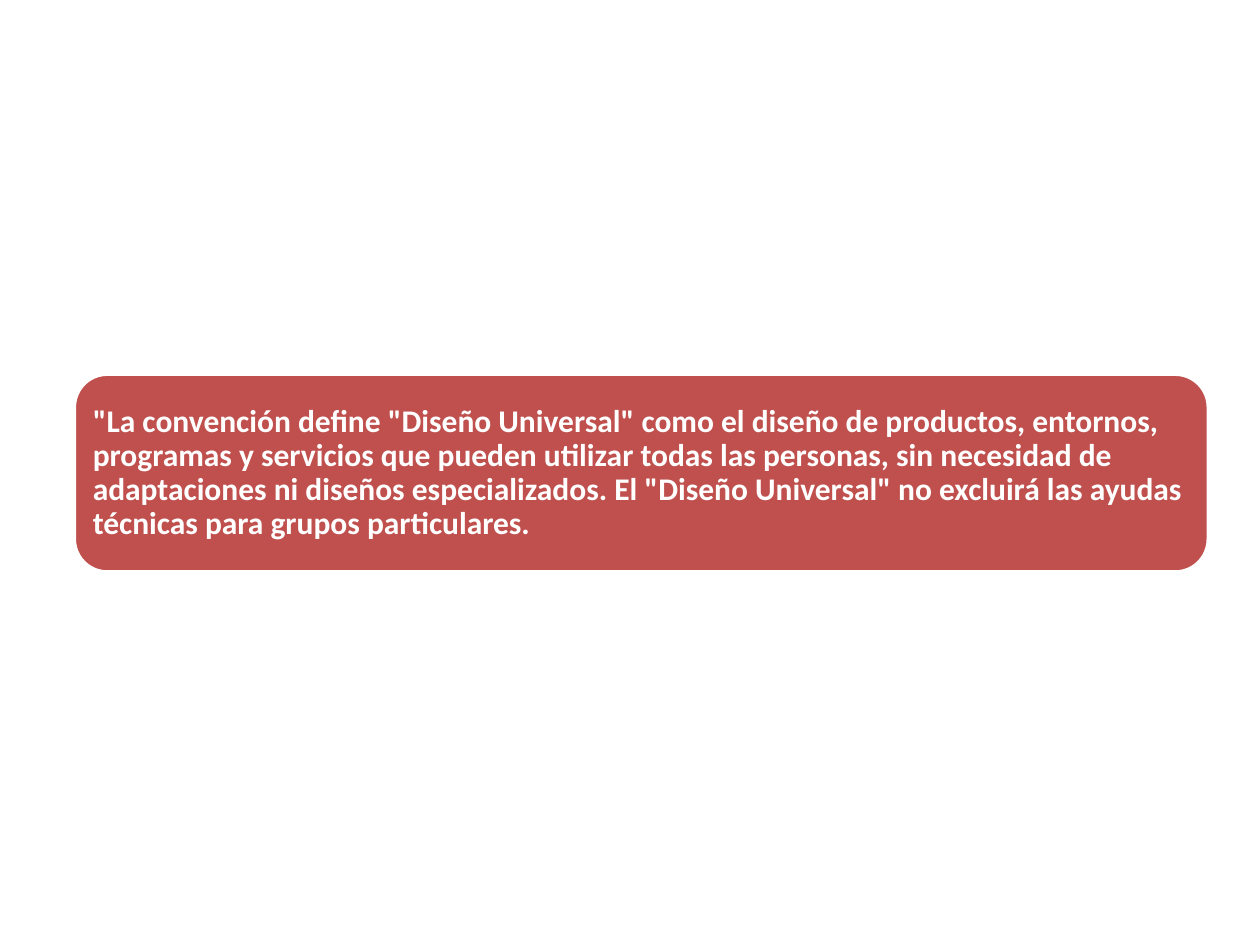
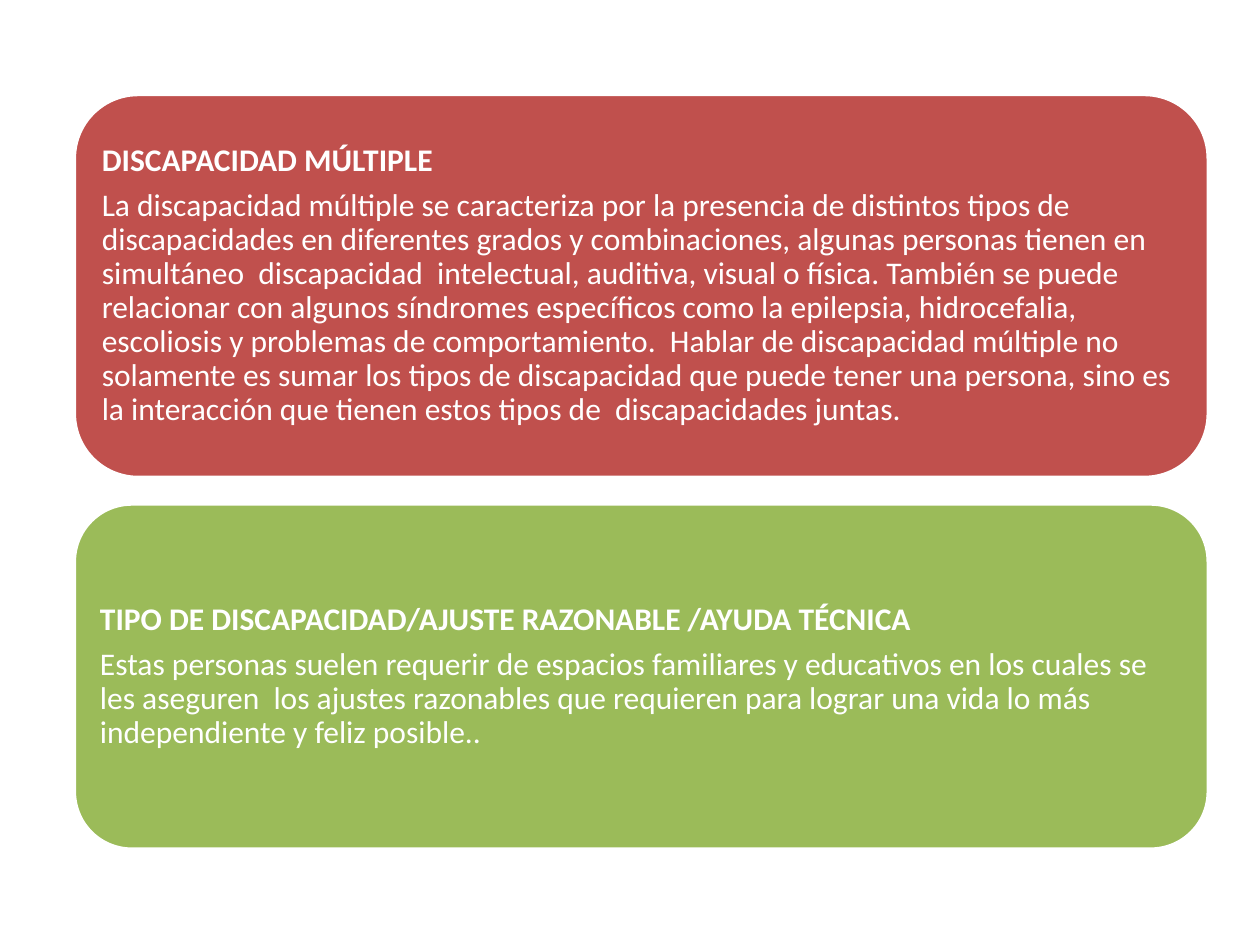
import dataclasses

import pptx
import pptx.dml.color
import pptx.enum.shapes
import pptx.enum.text
import pptx.slide
import pptx.util

RED = "C0504D"
GREEN = "9BBB59"
WHITE = "FFFFFF"
FONT = "Calibri"
PANEL_LEFT = 0.59
PANEL_WIDTH = 9
INSET = pptx.util.Inches(0.07)

FRAME_FORMAT = {
    "word_wrap": True,
    "vertical_anchor": pptx.enum.text.MSO_ANCHOR.MIDDLE,
    "margin_left": INSET,
    "margin_top": INSET,
    "margin_right": INSET,
    "margin_bottom": INSET,
}
PARAGRAPH_FORMAT = {
    "alignment": pptx.enum.text.PP_ALIGN.LEFT,
    "line_spacing": 0.9,
    "space_after": pptx.util.Pt(6.3),
}
FONT_FORMAT = {"name": FONT, "size": pptx.util.Pt(18)}


@dataclasses.dataclass(frozen=True)
class Panel:
    top: float
    height: float
    fill: str
    heading: str
    body: str = ""


UNIVERSAL_DESIGN = Panel(
    2.97, 1.57, RED,
    '"La convención define "Diseño Universal" como el diseño de productos, '
    "entornos, programas y servicios que pueden utilizar todas las personas, "
    "sin necesidad de adaptaciones ni diseños especializados. El "
    '"Diseño Universal" no excluirá las ayudas técnicas para grupos '
    "particulares. ",
)
MULTIPLE_DISABILITY = Panel(
    0.75, 3.04, RED,
    "DISCAPACIDAD MÚLTIPLE",
    "La discapacidad múltiple se caracteriza por la presencia de distintos "
    "tipos de discapacidades en diferentes grados y combinaciones, algunas "
    "personas tienen en simultáneo  discapacidad  intelectual, "
    "auditiva, visual o física. También se puede relacionar con algunos "
    "síndromes específicos como la epilepsia, hidrocefalia, escoliosis y "
    "problemas de comportamiento.  Hablar de discapacidad múltiple no "
    "solamente es sumar los tipos de discapacidad que puede tener una "
    "persona, sino es la interacción que tienen estos tipos de  "
    "discapacidades juntas.",
)
REASONABLE_ADJUSTMENT = Panel(
    4, 2.74, GREEN,
    "TIPO DE DISCAPACIDAD/AJUSTE RAZONABLE /AYUDA TÉCNICA",
    "Estas personas suelen requerir de espacios familiares y educativos en "
    "los cuales se les aseguren  los ajustes razonables que requieren para "
    "lograr una vida lo más independiente y feliz posible..",
)
SLIDES = [[UNIVERSAL_DESIGN], [MULTIPLE_DISABILITY, REASONABLE_ADJUSTMENT]]


def rgb(value: str) -> pptx.dml.color.RGBColor:
    return pptx.dml.color.RGBColor.from_string(value)


def apply_format(target: object, values: dict[str, object]) -> None:
    for name, value in values.items():
        setattr(target, name, value)


def draw_panel(slide: pptx.slide.Slide, panel: Panel) -> None:
    sp = slide.shapes.add_shape(
        pptx.enum.shapes.MSO_SHAPE.ROUNDED_RECTANGLE,
        pptx.util.Inches(PANEL_LEFT),
        pptx.util.Inches(panel.top),
        pptx.util.Inches(PANEL_WIDTH),
        pptx.util.Inches(panel.height),
    )
    sp.shadow.inherit = False
    sp.fill.solid()
    sp.fill.fore_color.rgb = rgb(panel.fill)
    sp.line.color.rgb = rgb(WHITE)
    sp.line.width = pptx.util.Pt(2)

    tf = sp.text_frame
    apply_format(tf, FRAME_FORMAT)
    texts = [text for text in (panel.heading, panel.body) if text]
    for i, text in enumerate(texts):
        p = tf.add_paragraph() if i else tf.paragraphs[0]
        apply_format(p, PARAGRAPH_FORMAT)
        r = p.add_run()
        r.text = text
        apply_format(r.font, FONT_FORMAT)
        r.font.bold = i == 0
        r.font.color.rgb = rgb(WHITE)


def main() -> None:
    prs = pptx.Presentation()
    prs.slide_width = pptx.util.Inches(10)
    prs.slide_height = pptx.util.Inches(7.5)
    blank = prs.slide_layouts.get_by_name("Blank")
    for panels in SLIDES:
        slide = prs.slides.add_slide(blank)
        for panel in panels:
            draw_panel(slide, panel)
    prs.save("out.pptx")


if __name__ == "__main__":
    main()
